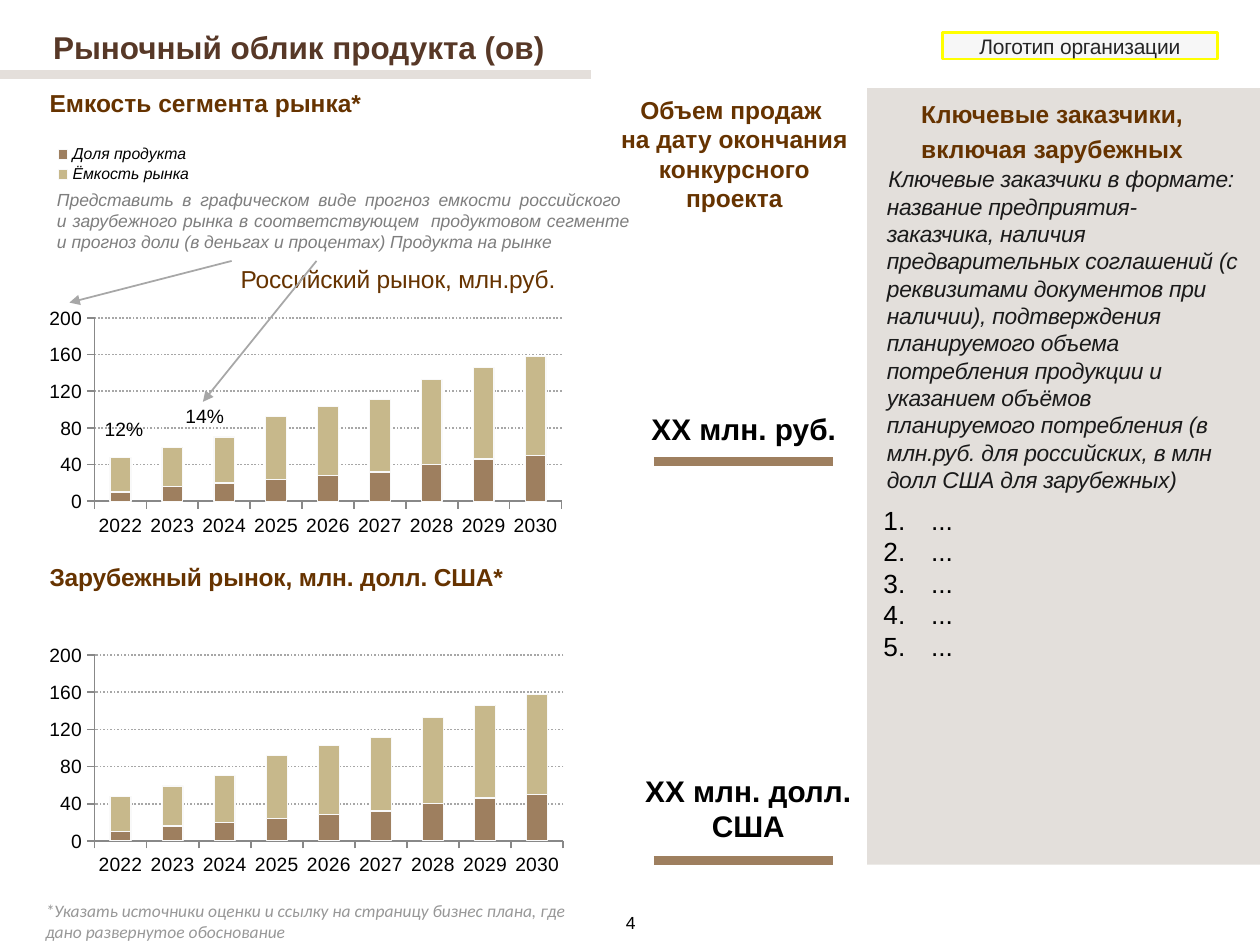
from dataclasses import dataclass

from lxml import etree
from pptx import Presentation
from pptx import util as u
from pptx.chart import data as chart_data
from pptx.dml import color
from pptx.enum import chart as charts, dml, shapes, text
from pptx.oxml import ns


@dataclass(frozen=True)
class Theme:
    """Colours, fonts and type sizes of the slide."""
    brown: str = "663300"
    title: str = "573827"
    black: str = "000000"
    hint: str = "7E7E7E"
    ink: str = "1A1A1A"
    label: str = "252525"
    footnote: str = "989898"
    panel: str = "E3DFDB"
    badge: str = "F1F1F1"
    badge_line: str = "FFFF00"
    rule: str = "A8998C"
    share: str = "9E7F5F"
    capacity: str = "C7B88B"
    edge: str = "F9F9F9"
    axis: str = "888888"
    grid: str = "A7A7A7"
    font: str = "Arial"
    note_font: str = "Calibri"
    title_size: int = 18
    value_size: int = 17
    list_size: int = 15
    heading_size: int = 14
    body_size: int = 13
    label_size: int = 12
    axis_size: int = 11
    small_size: int = 10
    legend_size: int = 9


@dataclass(frozen=True)
class Box:
    """A rectangle in centimetres."""
    left: float
    top: float
    width: float
    height: float

    def inner(self, left, top, width, height):
        """Return a box placed relative to this one."""
        return Box(self.left + left, self.top + top, width, height)

    def lengths(self):
        """Return the four lengths for python-pptx."""
        return [u.Cm(n) for n in (self.left, self.top, self.width, self.height)]


THEME = Theme()
YEARS = [str(year) for year in range(2022, 2031)]
SERIES = [
    ("Доля продукта", (10, 16, 20, 24, 28, 32, 40, 46, 50), THEME.share),
    ("Ёмкость рынка", (38, 43, 50, 68, 75, 79, 93, 100, 108), THEME.capacity),
]
LEFT, CENTER, JUSTIFY = text.PP_ALIGN.LEFT, text.PP_ALIGN.CENTER, text.PP_ALIGN.JUSTIFY


def rgb(value):
    return color.RGBColor.from_string(value)


def set_alpha(fill, percent):
    """Make a solid fill partly transparent."""
    node = fill._xPr.find(".//" + ns.qn("a:srgbClr"))
    etree.SubElement(node, ns.qn("a:alpha"), val=str(percent * 1000))


def style(font, size, colour, bold=False, italic=False, name=THEME.font):
    font.size, font.name, font.bold, font.italic = u.Pt(size), name, bold, italic
    font.color.rgb = rgb(colour)


def write(paragraph, content, align=LEFT, spacing=0, **look):
    """Fill a paragraph with runs, breaking the line at each newline."""
    paragraph.alignment = align
    for index, line in enumerate(content.split("\n")):
        if index:
            paragraph.add_line_break()
        run = paragraph.add_run()
        run.text = line
        style(run.font, **look)
        if spacing:
            run._r.get_or_add_rPr().set("spc", str(spacing))


def set_frame(frame, inset=0.0, wrap=True):
    frame.word_wrap = wrap
    frame.margin_left = frame.margin_right = u.Cm(inset)
    frame.margin_top = frame.margin_bottom = u.Cm(inset)


def add_text(slide, box, content, inset=0.0, wrap=True, **look):
    """Add a text box with one paragraph and return its frame."""
    frame = slide.shapes.add_textbox(*box.lengths()).text_frame
    set_frame(frame, inset, wrap)
    write(frame.paragraphs[0], content, **look)
    return frame


def add_heading(slide, box, content, **look):
    return add_text(slide, box, content, size=THEME.heading_size, colour=THEME.brown, **look)


def add_line(slide, box, start, end, colour, width, arrow=False, alpha=None):
    """Draw a line between two points given relative to the box."""
    points = [u.Cm(n) for x, y in (start, end) for n in (box.left + x, box.top + y)]
    connector = slide.shapes.add_connector(shapes.MSO_CONNECTOR.STRAIGHT, *points)
    connector.line.color.rgb = rgb(colour)
    connector.line.width = u.Pt(width)
    if alpha:
        set_alpha(connector.line.fill, alpha)
    properties = connector._element.spPr
    if arrow:
        etree.SubElement(properties.find(ns.qn("a:ln")), ns.qn("a:tailEnd"), type="triangle")
    etree.SubElement(properties, ns.qn("a:effectLst"))


def add_rectangle(slide, box, fill):
    shape = slide.shapes.add_shape(shapes.MSO_SHAPE.RECTANGLE, *box.lengths())
    shape.shadow.inherit = False
    shape.fill.solid()
    shape.fill.fore_color.rgb = rgb(fill)
    shape.line.fill.background()
    return shape


def set_layout(parent, index, fractions, inner=False):
    """Give a chart part a manual place as fractions of the chart."""
    for old in parent.findall(ns.qn("c:layout")):
        parent.remove(old)
    layout = etree.Element(ns.qn("c:layout"))
    manual = etree.SubElement(layout, ns.qn("c:manualLayout"))
    entries = [("layoutTarget", "inner")] if inner else []
    entries += [("xMode", "edge"), ("yMode", "edge"), *zip("xywh", fractions)]
    for tag, value in entries:
        etree.SubElement(manual, ns.qn("c:" + tag), val=str(value))
    parent.insert(index, layout)


def add_market_chart(slide, box, plot_area, legend_area=None):
    """Add the stacked columns of product share and market capacity."""
    data = chart_data.CategoryChartData(number_format="0")
    data.categories = YEARS
    for name, values, _ in SERIES:
        data.add_series(name, values)
    kind = charts.XL_CHART_TYPE.COLUMN_STACKED
    chart = slide.shapes.add_chart(kind, *box.lengths(), data).chart
    style(chart.font, THEME.small_size, THEME.black)
    chart.has_title = False
    plot = chart.plots[0]
    plot.gap_width, plot.overlap, plot.vary_by_categories = 150, 100, False
    for series, (_, _, colour) in zip(plot.series, SERIES):
        series.format.fill.solid()
        series.format.fill.fore_color.rgb = rgb(colour)
        series.format.line.color.rgb = rgb(THEME.edge)
        series.format.line.width = u.Pt(0.75)
    for axis in (chart.category_axis, chart.value_axis):
        style(axis.tick_labels.font, THEME.axis_size, THEME.black)
        axis.major_tick_mark = charts.XL_TICK_MARK.OUTSIDE
        axis.format.line.color.rgb = rgb(THEME.axis)
        axis.format.line.width = u.Pt(1)
    chart.category_axis.tick_label_position = charts.XL_TICK_LABEL_POSITION.LOW
    value_axis = chart.value_axis
    value_axis.minimum_scale, value_axis.maximum_scale, value_axis.major_unit = 0, 200, 40
    grid = value_axis.major_gridlines.format.line
    grid.color.rgb, grid.width = rgb(THEME.grid), u.Pt(1)
    grid.dash_style = dml.MSO_LINE.ROUND_DOT
    set_layout(chart._chartSpace.chart.plotArea, 0, plot_area, inner=True)
    chart.has_legend = legend_area is not None
    if legend_area:
        chart.legend.position = charts.XL_LEGEND_POSITION.TOP
        chart.legend.include_layout = True
        style(chart.legend.font, THEME.legend_size, THEME.black, italic=True)
        set_layout(chart.legend._element, 1, legend_area)


def add_header(slide, box):
    """Place the title, its rule and the organisation badge."""
    add_text(slide, box.inner(0.94, 0.43, 10.21, 0.97), "Рыночный облик продукта (ов)", inset=0.13,
             wrap=False, size=THEME.title_size, colour=THEME.title, bold=True)
    add_line(slide, box, (0, 1.5), (11.91, 1.5), THEME.rule, 5, alpha=31)
    badge = add_rectangle(slide, box.inner(19, 0.66, 5.54, 0.53), THEME.badge)
    set_alpha(badge.fill, 52)
    badge.line.color.rgb, badge.line.width = rgb(THEME.badge_line), u.Pt(1.56)
    set_frame(badge.text_frame)
    write(badge.text_frame.paragraphs[0], "Логотип организации", align=CENTER, spacing=-10,
          size=THEME.label_size, colour=THEME.label)


def add_domestic_market(slide, box):
    """Place the domestic chart with its hint, arrows and share labels."""
    add_heading(slide, box.inner(0, 0, 6.71, 0.61), "Емкость сегмента рынка*", bold=True)
    add_market_chart(slide, box.inner(-0.87, 0.79, 11.25, 8.31),
                     (0.158, 0.462, 0.837, 0.445), (0.08, 0.04, 0.26, 0.1))
    add_text(slide, box.inner(0.15, 2.03, 11.53, 1.27),
             "Представить в графическом виде прогноз емкости российского \n"
             "и зарубежного рынка в соответствующем\u00a0 продуктовом сегменте "
             "и прогноз доли (в деньгах и процентах) Продукта на рынке".replace("\u00a0", " "),
             align=JUSTIFY, size=THEME.small_size, colour=THEME.hint, italic=True)
    add_heading(slide, box.inner(3.85, 3.55, 6.6, 0.56), "Российский рынок, млн.руб.", spacing=-10)
    for start, end in (((5.38, 3.48), (3.09, 6.32)), ((3.67, 3.48), (0.4, 4.32))):
        add_line(slide, box, start, end, THEME.grid, 1, arrow=True)
    for left, top, share in ((0.98, 6.5, "12%"), (2.61, 6.25, "14%")):
        add_text(slide, box.inner(left, top, 1.07, 0.66), share, inset=0.13, wrap=False,
                 size=THEME.axis_size, colour=THEME.black)


def add_foreign_market(slide, box):
    """Place the foreign chart under its heading."""
    add_heading(slide, box.inner(0, 0, 9.53, 0.61), "Зарубежный рынок, млн. долл. США*",
                bold=True, spacing=-10)
    add_market_chart(slide, box.inner(-0.21, 1.47, 10.62, 4.88), (0.105, 0.084, 0.89, 0.767))


def add_sales(slide, box):
    """Place the sales heading and the two underlined totals."""
    add_heading(slide, box.inner(0, 0, box.width, 2.64),
                "Объем продаж \nна дату окончания конкурсного проекта", inset=0.13,
                align=CENTER, bold=True)
    totals = (("XX млн. руб.", 0.66, 6.5, 3.99, 7.52), ("XX млн. долл. США", 0.56, 13.79, 4.37, 15.57))
    for total, left, top, width, rule in totals:
        add_text(slide, box.inner(left, top, width, 0.74), total, align=CENTER,
                 size=THEME.value_size, colour=THEME.black, bold=True)
        add_line(slide, box, (0.84, rule), (4.45, rule), THEME.share, 5)


def add_customers(slide, box):
    """Place the panel of key customers with its numbered list."""
    add_rectangle(slide, box, THEME.panel)
    heading = add_heading(slide, box.inner(0.43, -0.03, 6.6, 1.63),
                          "Ключевые заказчики, включая зарубежных", inset=0.13,
                          align=CENTER, bold=True)
    heading.paragraphs[0].line_spacing = u.Pt(20)
    description = add_text(
        slide, box.inner(0.4, 1.55, 7.17, 6.68),
        "Ключевые заказчики в формате: название предприятия-заказчика, наличия предварительных "
        "соглашений (с реквизитами документов при наличии), подтверждения планируемого объема "
        "потребления продукции и указанием объёмов планируемого потребления (в млн.руб. для "
        "российских, в млн долл США для зарубежных)",
        spacing=-10, size=THEME.body_size, colour=THEME.ink, italic=True)
    description.paragraphs[0]._p.get_or_add_pPr().set("indent", str(u.Cm(0.03)))
    frame = slide.shapes.add_textbox(*box.inner(0.2, 8.25, 6.55, 3.45).lengths()).text_frame
    set_frame(frame, 0.13)
    for index in range(5):
        paragraph = frame.add_paragraph() if index else frame.paragraphs[0]
        properties = paragraph._p.get_or_add_pPr()
        properties.set("marL", str(u.Cm(0.96)))
        properties.set("indent", str(u.Cm(-0.96)))
        etree.SubElement(properties, ns.qn("a:buAutoNum"), type="arabicPeriod")
        write(paragraph, "...", size=THEME.list_size, colour=THEME.black)


def add_footer(slide, box):
    """Place the footnote and the page number."""
    add_text(slide, box.inner(0.79, 0, 10.9, 1.04),
             "*Указать источники оценки и ссылку на страницу бизнес плана, где дано развернутое обоснование",
             inset=0.13, size=THEME.small_size, colour=THEME.footnote, italic=True, name=THEME.note_font)
    add_text(slide, box.inner(12.62, 0.38, 0.36, 0.38), "4", wrap=False,
             size=THEME.small_size, colour=THEME.black)


def main():
    presentation = Presentation()
    presentation.slide_width, presentation.slide_height = u.Cm(25.4), u.Cm(19.05)
    slide = presentation.slides.add_slide(presentation.slide_layouts[6])
    add_customers(slide, Box(17.48, 1.78, 7.92, 15.65))
    add_domestic_market(slide, Box(1, 1.78, 11.7, 9.1))
    add_foreign_market(slide, Box(1, 11.33, 11.7, 6.35))
    add_sales(slide, Box(12.34, 1.78, 4.93, 15.6))
    add_header(slide, Box(0, 0, 25.4, 1.78))
    add_footer(slide, Box(0, 18.01, 25.4, 1.04))
    presentation.save("out.pptx")


if __name__ == "__main__":
    main()
